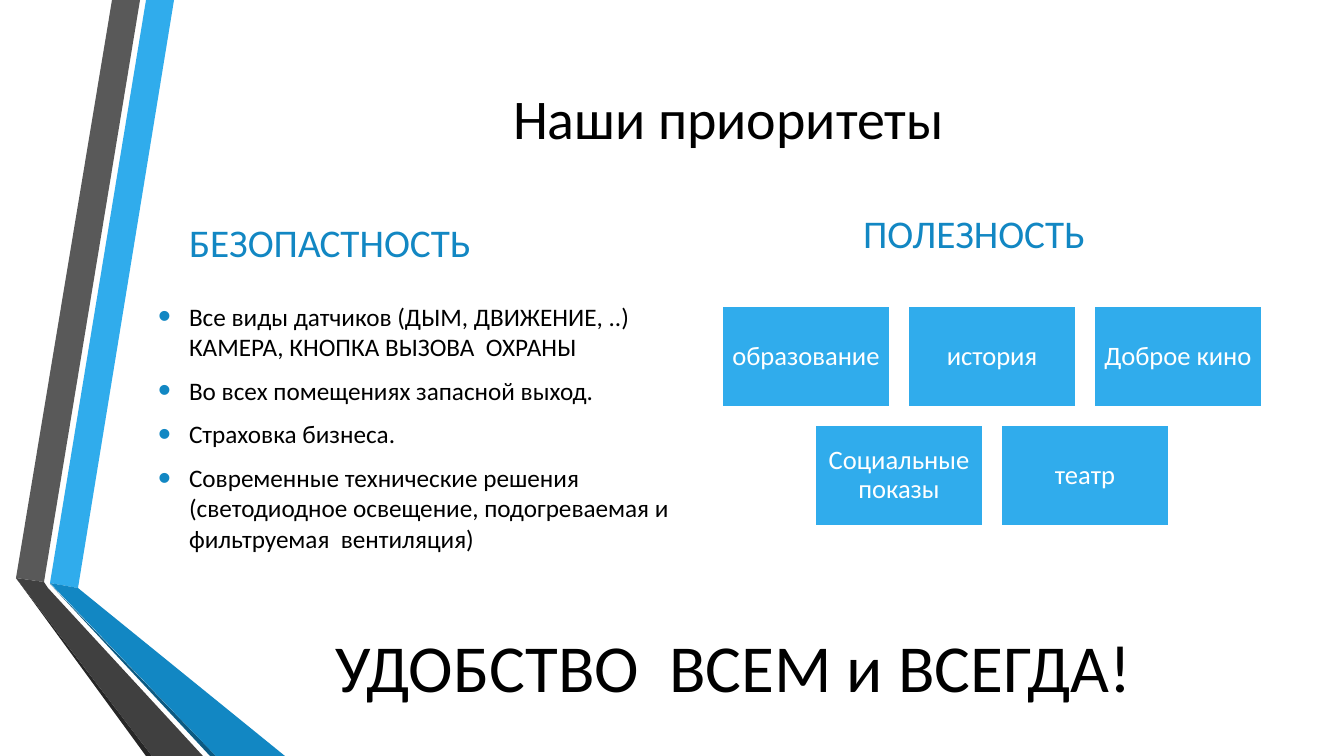
from lxml.etree import SubElement
from pptx import Presentation
from pptx.dml.color import RGBColor
from pptx.enum.shapes import MSO_SHAPE
from pptx.enum.text import MSO_ANCHOR, MSO_AUTO_SIZE, PP_ALIGN
from pptx.oxml.ns import qn
from pptx.util import Pt

PX = 914400 / 100.8
FONT = "Calibri"
COLORS = {
    "text": "000000",
    "white": "FFFFFF",
    "sky": "30ACEC",
    "blue": "1287C3",
    "navy": "0C5A82",
    "grey": "595959",
    "charcoal": "404040",
    "shadow": "262626",
}

RIBBONS = [
    ("sky", [(50, 583), (78, 588), (174, 0), (146, 0)]),
    ("grey", [(140, 0), (112, 0), (16, 578), (44, 582)]),
    ("shadow", [(16, 578), (146, 756), (152, 756)]),
    ("navy", [(50, 584), (210, 756), (216, 756)]),
    ("blue", [(50, 583), (216, 756), (285, 756), (78, 588)]),
    ("charcoal", [(203, 756), (48, 588), (44, 582), (16, 578), (152, 756)]),
]
SAFETY = [
    "Все виды датчиков (ДЫМ, ДВИЖЕНИЕ, ..) КАМЕРА, КНОПКА ВЫЗОВА  ОХРАНЫ",
    "Во всех помещениях запасной выход.",
    "Страховка бизнеса.",
    "Современные технические решения  (светодиодное освещение, "
    "подогреваемая и фильтруемая  вентиляция)",
]
BENEFITS = [
    ["образование", "история", "Доброе кино"],
    ["Социальные показы", "театр"],
]
CARD_WIDTH, CARD_HEIGHT, CARD_GAP = 168, 101, 18
CARDS_CENTER, CARDS_TOP = 992, 306


def emu(*lengths):
    return [round(length * PX) for length in lengths]


def color(name):
    return RGBColor.from_string(COLORS[name])


class SlideBuilder:
    def __init__(self, slide):
        self.slide = slide
        self.shapes = slide.shapes

    def style(self, para, size, color_name, align=PP_ALIGN.LEFT):
        para.alignment = align
        para.font.name = FONT
        para.font.size = Pt(size)
        para.font.bold = False
        para.font.color.rgb = color(color_name)

    def ribbon(self, color_name, points):
        builder = self.shapes.build_freeform(*points[0], scale=PX)
        builder.add_line_segments(points[1:])
        ribbon = builder.convert_to_shape()
        ribbon.shadow.inherit = False
        ribbon.fill.solid()
        ribbon.fill.fore_color.rgb = color(color_name)
        ribbon.line.fill.background()

    def placeholder(self, index, bounds, anchor):
        """Move a template placeholder into place, in front of earlier shapes."""
        box = next(p for p in self.slide.placeholders
                   if p.placeholder_format.idx == index)
        box.left, box.top, box.width, box.height = emu(*bounds)
        self.shapes._spTree.append(box._element)
        frame = box.text_frame
        frame.auto_size = MSO_AUTO_SIZE.NONE
        frame.vertical_anchor = anchor
        return frame

    def title(self, text, bounds):
        frame = self.placeholder(0, bounds, MSO_ANCHOR.MIDDLE)
        frame.text = text
        self.style(frame.paragraphs[0], 40, "text", PP_ALIGN.CENTER)

    def heading(self, index, text, bounds):
        frame = self.placeholder(index, bounds, MSO_ANCHOR.BOTTOM)
        frame.text = text
        para = frame.paragraphs[0]
        para.space_before, para.space_after = Pt(0), Pt(6)
        self.style(para, 28, "blue")

    def bullets(self, index, items, bounds):
        frame = self.placeholder(index, bounds, MSO_ANCHOR.TOP)
        frame.text = "\n".join(items)
        for number, para in enumerate(frame.paragraphs):
            para.space_before = Pt(3.6 if number else 0)
            para.space_after = Pt(6)
            self.bullet(para)
            self.style(para, 18, "text")

    def bullet(self, para):
        properties = para._p.get_or_add_pPr()
        indent, = emu(31)
        properties.set("marL", str(indent))
        properties.set("indent", str(-indent))
        bullet_color = SubElement(properties, qn("a:buClr"))
        SubElement(bullet_color, qn("a:srgbClr"), val=COLORS["blue"])
        SubElement(properties, qn("a:buSzPct"), val="145000")
        SubElement(properties, qn("a:buFont"), typeface="Arial")
        SubElement(properties, qn("a:buChar"), char="•")

    def card(self, text, bounds):
        card = self.shapes.add_shape(MSO_SHAPE.RECTANGLE, *emu(*bounds))
        card.shadow.inherit = False
        card.fill.solid()
        card.fill.fore_color.rgb = color("sky")
        card.line.color.rgb = color("white")
        card.line.width = Pt(1.25)
        frame = card.text_frame
        frame.word_wrap = True
        frame.vertical_anchor = MSO_ANCHOR.MIDDLE
        margin, = emu(8)
        frame.margin_left = frame.margin_right = margin
        frame.margin_top = frame.margin_bottom = margin
        frame.text = text
        para = frame.paragraphs[0]
        para.line_spacing = 0.9
        self.style(para, 19, "white", PP_ALIGN.CENTER)

    def slogan(self, text, bounds):
        frame = self.shapes.add_textbox(*emu(*bounds)).text_frame
        frame.word_wrap = True
        frame.auto_size = MSO_AUTO_SIZE.SHAPE_TO_FIT_TEXT
        frame.text = text
        self.style(frame.paragraphs[0], 48, "text")


def main():
    deck = Presentation()
    deck.slide_width, deck.slide_height = emu(1344, 756)
    comparison_layout = deck.slide_layouts[4]
    page = SlideBuilder(deck.slides.add_slide(comparison_layout))

    for color_name, points in RIBBONS:
        page.ribbon(color_name, points)
    page.title("Наши приоритеты", (176, 20, 1105, 194))
    page.heading(1, "БЕЗОПАСТНОСТЬ", (179, 207, 508, 63))
    page.bullets(2, SAFETY, (148, 296, 539, 271))
    page.heading(3, "ПОЛЕЗНОСТЬ", (853, 198, 510, 63))

    unused = page.slide.placeholders[4]._element
    unused.getparent().remove(unused)

    step = CARD_WIDTH + CARD_GAP
    for row, labels in enumerate(BENEFITS):
        left = CARDS_CENTER - (len(labels) * step - CARD_GAP) // 2
        top = CARDS_TOP + row * (CARD_HEIGHT + CARD_GAP)
        for column, label in enumerate(labels):
            page.card(label, (left + column * step, top, CARD_WIDTH, CARD_HEIGHT))

    page.slogan("УДОБСТВО  ВСЕМ и ВСЕГДА! ", (326, 620, 955, 92))
    deck.save("out.pptx")


if __name__ == "__main__":
    main()
